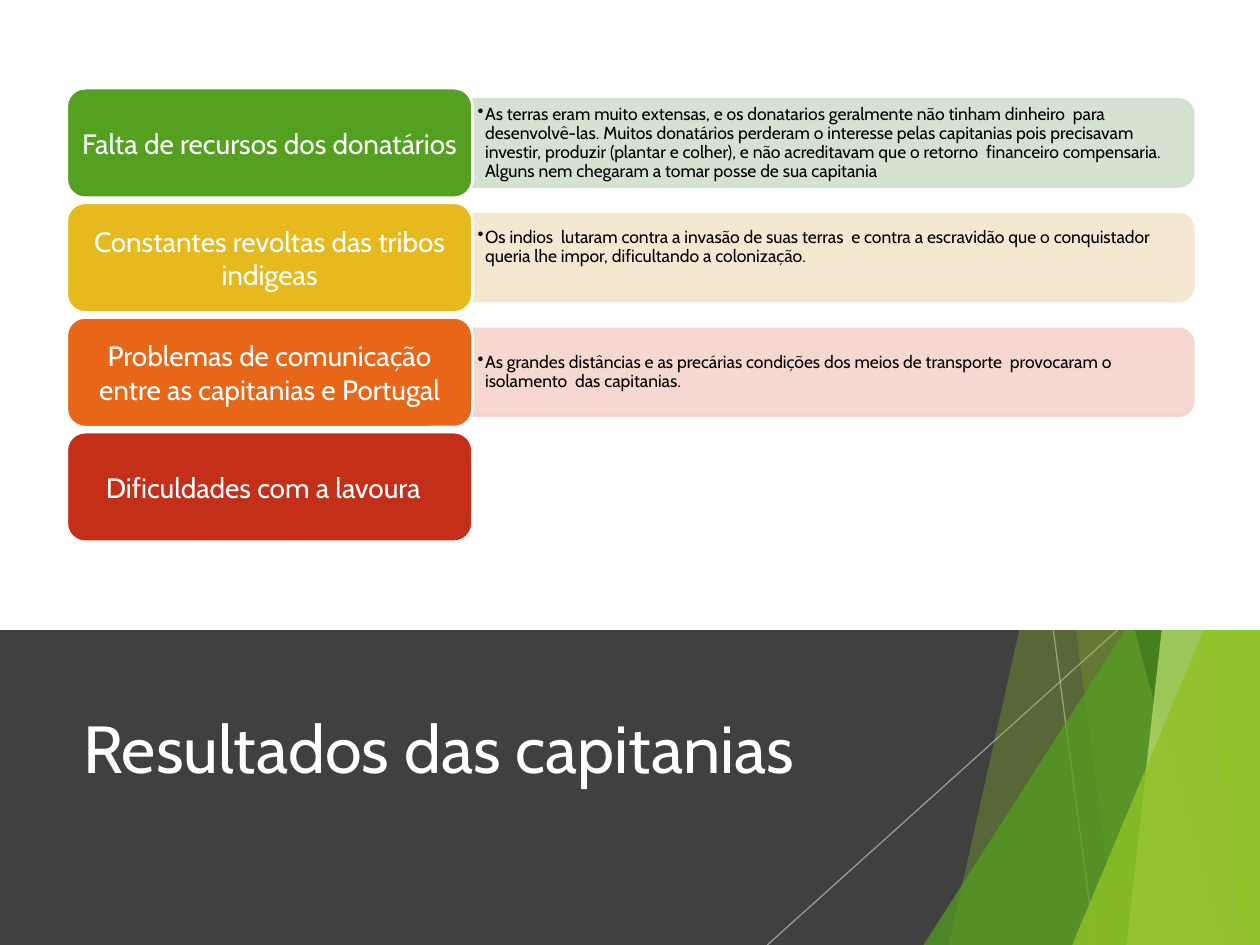
from lxml.etree import SubElement
from pptx import Presentation
from pptx.dml.color import RGBColor
from pptx.enum.shapes import MSO_CONNECTOR, MSO_SHAPE as Preset
from pptx.enum.text import MSO_ANCHOR as Anchor, MSO_AUTO_SIZE, PP_ALIGN as Align
from pptx.oxml.ns import qn
from pptx.util import Inches, Pt

WHITE = RGBColor(0xFF, 0xFF, 0xFF)
BLACK = RGBColor(0x00, 0x00, 0x00)
CHARCOAL = RGBColor(0x40, 0x40, 0x40)
SILVER = RGBColor(0xBF, 0xBF, 0xBF)
LIME = RGBColor(0x90, 0xC2, 0x26)
PALE_LIME = RGBColor(0xC0, 0xE4, 0x74)
GREEN = RGBColor(0x54, 0xA0, 0x21)
DARK_GREEN = RGBColor(0x3F, 0x78, 0x19)
YELLOW = RGBColor(0xE6, 0xB9, 0x1E)
ORANGE = RGBColor(0xE7, 0x66, 0x18)
RED = RGBColor(0xC4, 0x2F, 0x1A)
PALE_GREEN = RGBColor(0xD1, 0xDF, 0xCD)
PALE_YELLOW = RGBColor(0xF5, 0xE6, 0xCD)
PALE_RED = RGBColor(0xF6, 0xD3, 0xCC)

TITLE = "Resultados das capitanias"
CAUSES = [
    ("Falta de recursos dos donatários", GREEN, PALE_GREEN, 0.02,
     "As terras eram muito extensas, e os donatarios geralmente não tinham dinheiro  para "
     "desenvolvê-las. Muitos donatários perderam o interesse pelas capitanias pois precisavam "
     "investir, produzir (plantar e colher), e não acreditavam que o retorno  financeiro "
     "compensaria. Alguns nem chegaram a tomar posse de sua capitania"),
    ("Constantes revoltas das tribos indigeas", YELLOW, PALE_YELLOW, 0.19,
     "Os indios  lutaram contra a invasão de suas terras  e contra a escravidão que o "
     "conquistador queria lhe impor, dificultando a colonização."),
    ("Problemas de comunicação entre as capitanias e Portugal", ORANGE, PALE_RED, 0.02,
     "As grandes distâncias e as precárias condições dos meios de transporte  provocaram o "
     "isolamento  das capitanias."),
    ("Dificuldades com a lavoura  ", RED, None, None, None),
]
RAYS = [((8.36, 5), (8.69, 7.5)), ((8.87, 5), (6.09, 7.5))]
FACETS = [
    ("blade", 9.21, 7.53, LIME, 30),
    ("blade", 7.88, 8.87, LIME, 20),
    ("corner", 2.67, 4.17, GREEN, 72),
    ("blade", 7.66, 9.68, DARK_GREEN, 70),
    ("blade", 9.78, 8.94, PALE_LIME, 70),
    ("blade", 8.97, 9.88, LIME, 65),
    ("corner", 1.49, 3.57, LIME, 80),
]

WIDTH, HEIGHT = 10, 7.5
SPLIT = HEIGHT * 2 / 3
LEFT, TOP, PITCH = 0.53, 0.7, 0.91
LABEL_W, LABEL_H = 3.22, 0.87
BAR_W, BAR_H = 5.72, 0.69
BAR_LEFT = LEFT + LABEL_W
LABEL_FONT = {"name": "Cabin", "size": Pt(16)}
DETAIL_FONT = {"name": "Cabin", "size": Pt(10)}
TITLE_FONT = {"name": "Cabin", "size": Pt(38)}

prs = Presentation()
prs.slide_width, prs.slide_height = Inches(WIDTH), Inches(HEIGHT)
slide = prs.slides.add_slide(prs.slide_layouts[5])
shapes = slide.shapes


def box(left, top, width, height):
    return [Inches(v) for v in (left, top, width, height)]


def set_alpha(part, percent):
    for color in part.iter(qn("a:srgbClr")):
        SubElement(color, qn("a:alpha"), val=str(percent * 1000))


def paint(shape, fill, line=None, alpha=100):
    shape.shadow.inherit = False
    shape.fill.solid()
    shape.fill.fore_color.rgb = fill
    if line is None:
        shape.line.fill.background()
    else:
        shape.line.color.rgb = line
        shape.line.width = Pt(1.5)
    if alpha < 100:
        set_alpha(shape.element.spPr, alpha)
    return shape


def add_preset(preset, area, fill, line=None, alpha=100):
    return paint(shapes.add_shape(preset, *box(*area)), fill, line, alpha)


def write(shape, text, font, color, align, insets, anchor=Anchor.MIDDLE):
    frame = shape.text_frame
    left, top, right, bottom = [Inches(v) for v in insets]
    settings = {"word_wrap": True, "auto_size": MSO_AUTO_SIZE.NONE, "vertical_anchor": anchor,
                "margin_left": left, "margin_top": top, "margin_right": right,
                "margin_bottom": bottom}
    for key, value in settings.items():
        setattr(frame, key, value)
    paragraph = frame.paragraphs[0]
    paragraph.alignment = align
    run = paragraph.add_run()
    run.text = text
    for key, value in font.items():
        setattr(run.font, key, value)
    run.font.color.rgb = color
    return paragraph


def add_bullet(paragraph):
    paragraph.line_spacing = 0.9
    props = paragraph._p.get_or_add_pPr()
    props.set("marL", str(Inches(0.06)))
    props.set("indent", str(-Inches(0.06)))
    SubElement(props, qn("a:buChar"), char="•")


def add_ray(start, end):
    ray = shapes.add_connector(MSO_CONNECTOR.STRAIGHT, *box(*start, *end))
    ray.line.color.rgb = SILVER
    ray.line.width = Pt(0.75)
    set_alpha(ray.element.spPr, 70)
    SubElement(ray.element.spPr, qn("a:effectLst"))


def add_facet(kind, first, second, color, alpha):
    if kind == "corner":
        area = (WIDTH - first, HEIGHT - second, first, second)
        add_preset(Preset.ISOSCELES_TRIANGLE, area, color, alpha=alpha).adjustments[0] = 1
        return
    builder = shapes.build_freeform(Inches(first), 0)
    corners = [(WIDTH, 0), (WIDTH, HEIGHT), (second, HEIGHT)]
    builder.add_line_segments([(Inches(x), Inches(y)) for x, y in corners], close=True)
    paint(builder.convert_to_shape(), color, alpha=alpha)


def add_cause(row, label, color, tint, bottom_inset, detail):
    top = TOP + row * PITCH
    middle = top + LABEL_H / 2
    if detail:
        area = (BAR_LEFT + (BAR_W - BAR_H) / 2, middle - BAR_W / 2, BAR_H, BAR_W)
        add_preset(Preset.ROUND_2_SAME_RECTANGLE, area, tint, tint, 90).rotation = 90
        note = shapes.add_textbox(*box(BAR_LEFT, middle - 0.31, BAR_W - 0.03, 0.62))
        add_bullet(write(note, detail, DETAIL_FONT, BLACK, Align.LEFT,
                         (0.04, 0.02, 0.04, bottom_inset)))
    tile = add_preset(Preset.ROUNDED_RECTANGLE, (LEFT, top, LABEL_W, LABEL_H), color, WHITE)
    write(tile, label, LABEL_FONT, WHITE, Align.CENTER, (0.07, 0.03, 0.07, 0.03))


add_preset(Preset.RECTANGLE, (0, SPLIT, WIDTH, HEIGHT - SPLIT), CHARCOAL)
for ray_ends in RAYS:
    add_ray(*ray_ends)
for facet in FACETS:
    add_facet(*facet)

title = shapes.title
title.left, title.top, title.width, title.height = box(0.56, 5.21, 7.05, 1.44)
write(title, TITLE, TITLE_FONT, WHITE, Align.LEFT, (0.1, 0.05, 0.1, 0.05))
title.element.getparent().append(title.element)

add_preset(Preset.RECTANGLE, (0, 0, WIDTH, SPLIT), WHITE)
for row, cause in enumerate(CAUSES):
    add_cause(row, *cause)

prs.save("out.pptx")
